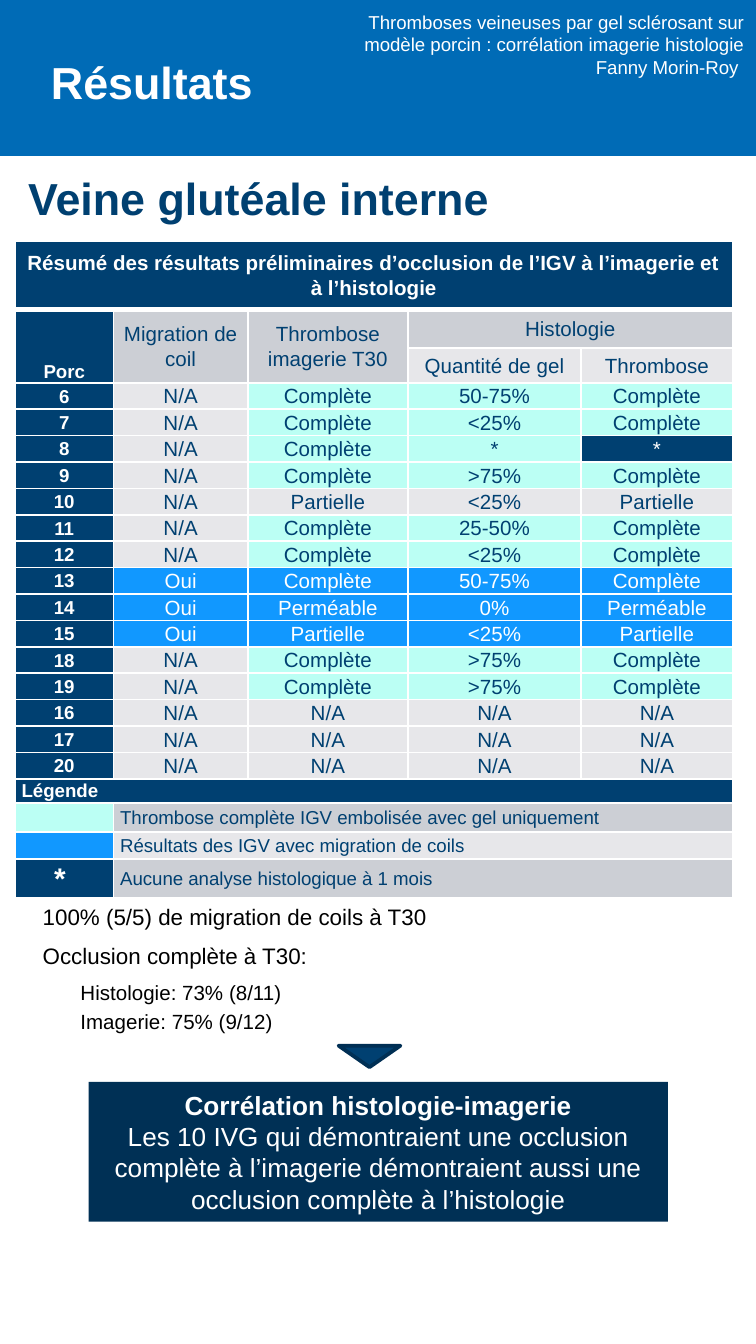
from dataclasses import dataclass

from lxml import etree
from pptx import Presentation
from pptx.dml.color import RGBColor
from pptx.enum import shapes, text
from pptx.oxml import ns
from pptx.util import Pt


@dataclass(frozen=True)
class Theme:
    font: str = "Arial"
    white: str = "FFFFFF"
    black: str = "000000"
    banner: str = "006BB6"
    navy: str = "004071"
    callout: str = "003055"
    outline: str = "002F54"
    grey: str = "CCCFD5"
    pale: str = "E7E7EA"
    mint: str = "BBFFF4"
    blue: str = "1198FF"
    title: float = 24
    conclusion: float = 14
    finding: float = 12
    cell: float = 11
    small: float = 10
    star: float = 16


@dataclass(frozen=True)
class Box:
    left: float
    top: float
    width: float
    height: float

    def lengths(self) -> tuple:
        return Pt(self.left), Pt(self.top), Pt(self.width), Pt(self.height)


@dataclass(frozen=True)
class Line:
    words: str
    size: float
    color: str
    bold: bool = False
    align: text.PP_ALIGN = text.PP_ALIGN.LEFT
    before: float = 0
    after: float = 0
    indent: float = 0
    spacing: float = 1.0


@dataclass(frozen=True)
class PigResult:
    pig: int
    migration: str
    imaging: str
    gel: str
    histology: str
    fill: str


THEME = Theme()
CENTER, RIGHT = text.PP_ALIGN.CENTER, text.PP_ALIGN.RIGHT
TOP, MIDDLE, BOTTOM = (text.MSO_ANCHOR.TOP, text.MSO_ANCHOR.MIDDLE, text.MSO_ANCHOR.BOTTOM)

RESULTS = [
    PigResult(6, "N/A", "Complète", "50-75%", "Complète", THEME.mint),
    PigResult(7, "N/A", "Complète", "<25%", "Complète", THEME.mint),
    PigResult(8, "N/A", "Complète", "*", "*", THEME.mint),
    PigResult(9, "N/A", "Complète", ">75%", "Complète", THEME.mint),
    PigResult(10, "N/A", "Partielle", "<25%", "Partielle", THEME.pale),
    PigResult(11, "N/A", "Complète", "25-50%", "Complète", THEME.mint),
    PigResult(12, "N/A", "Complète", "<25%", "Complète", THEME.mint),
    PigResult(13, "Oui", "Complète", "50-75%", "Complète", THEME.blue),
    PigResult(14, "Oui", "Perméable", "0%", "Perméable", THEME.blue),
    PigResult(15, "Oui", "Partielle", "<25%", "Partielle", THEME.blue),
    PigResult(18, "N/A", "Complète", ">75%", "Complète", THEME.mint),
    PigResult(19, "N/A", "Complète", ">75%", "Complète", THEME.mint),
    *(PigResult(pig, "N/A", "N/A", "N/A", "N/A", THEME.pale) for pig in (16, 17, 20)),
]
COLUMNS = [52.8, 72, 85.8, 92.8, 81.2]
ROWS = [36.8, 20.8, 18.5, *[13.92] * len(RESULTS), 12.2, 15.6, 14.6, 18.7]


def color(value: str) -> RGBColor:
    return RGBColor.from_string(value)


def write(frame, lines: list[Line]) -> None:
    frame.word_wrap = True
    for index, line in enumerate(lines):
        paragraph = frame.paragraphs[0] if index == 0 else frame.add_paragraph()
        if line.indent:
            paragraph.level = 1
            properties = paragraph._p.get_or_add_pPr()
            properties.set("marL", str(Pt(line.indent)))
            properties.set("indent", "0")
        paragraph.alignment = line.align
        paragraph.line_spacing = line.spacing
        paragraph.space_before, paragraph.space_after = Pt(line.before), Pt(line.after)
        run = paragraph.add_run()
        run.text = line.words
        run.font.name, run.font.size, run.font.bold = THEME.font, Pt(line.size), line.bold
        run.font.color.rgb = color(line.color)


def add_text(slide, box: Box, lines: list[Line], inset: float = 3.6) -> None:
    frame = slide.shapes.add_textbox(*box.lengths()).text_frame
    frame.margin_top = Pt(inset)
    frame.vertical_anchor = TOP
    write(frame, lines)


def add_block(slide, kind, box: Box, fill: str, outline: str = ""):
    shape = slide.shapes.add_shape(kind, *box.lengths())
    shape.shadow.inherit = False
    shape.fill.solid()
    shape.fill.fore_color.rgb = color(fill)
    if outline:
        shape.line.color.rgb = color(outline)
        shape.line.width = Pt(2)
        etree.SubElement(shape.line._get_or_add_ln(), ns.qn("a:round"))
    else:
        shape.line.fill.background()
    return shape


def prepare_cell(cell, row: int) -> None:
    cell.margin_left = cell.margin_right = Pt(3.6)
    cell.margin_top = cell.margin_bottom = 0
    ending = etree.SubElement(cell.text_frame.paragraphs[0]._p, ns.qn("a:endParaRPr"))
    ending.set("sz", str(THEME.small * 100))
    properties = cell._tc.get_or_add_tcPr()
    for side in ("L", "R", "T", "B"):
        thick = (row, side) in ((0, "B"), (1, "T"))
        border = etree.SubElement(properties, ns.qn(f"a:ln{side}"), w=str(Pt(3 if thick else 1)))
        fill = etree.SubElement(border, ns.qn("a:solidFill"))
        etree.SubElement(fill, ns.qn("a:srgbClr"), val=THEME.white)


def fill_cell(cell, fill: str, words: str = "", size: float = THEME.cell, ink: str = THEME.navy,
              bold: bool = False, align=CENTER, anchor=MIDDLE) -> None:
    cell.fill.solid()
    cell.fill.fore_color.rgb = color(fill)
    cell.vertical_anchor = anchor
    if words:
        write(cell.text_frame, [Line(words, size, ink, bold, align, spacing=1.07)])


def add_results_table(slide, left: float, top: float) -> None:
    box = Box(left, top, sum(COLUMNS), sum(ROWS))
    table = slide.shapes.add_table(len(ROWS), len(COLUMNS), *box.lengths()).table
    for column, width in zip(table.columns, COLUMNS):
        column.width = Pt(width)
    for index, (row, height) in enumerate(zip(table.rows, ROWS)):
        row.height = Pt(height)
        for cell in row.cells:
            prepare_cell(cell, index)

    legend = 3 + len(RESULTS)
    spans = [(0, 0, 0, 4), (1, 0, 2, 0), (1, 1, 2, 1), (1, 2, 2, 2), (1, 3, 1, 4), (legend, 0, legend, 4)]
    spans += [(row, 1, row, 4) for row in range(legend + 1, legend + 4)]
    for first_row, first_column, last_row, last_column in spans:
        table.cell(first_row, first_column).merge(table.cell(last_row, last_column))

    fill_cell(table.cell(0, 0), THEME.navy, "Résumé des résultats préliminaires d’occlusion de "
              "l’IGV à l’imagerie et à l’histologie", ink=THEME.white, bold=True)
    fill_cell(table.cell(1, 0), THEME.navy, "Porc", THEME.small, THEME.white, True, anchor=BOTTOM)
    for column, heading in enumerate(("Migration de coil", "Thrombose imagerie T30", "Histologie"), 1):
        fill_cell(table.cell(1, column), THEME.grey, heading)
    for column, heading in enumerate(("Quantité de gel", "Thrombose"), 3):
        fill_cell(table.cell(2, column), THEME.pale, heading)

    for row, result in enumerate(RESULTS, 3):
        fill_cell(table.cell(row, 0), THEME.navy, str(result.pig), THEME.small, THEME.white, True)
        migrated = result.fill == THEME.blue
        values = (result.migration, result.imaging, result.gel, result.histology)
        for column, value in enumerate(values, 1):
            unanalysed = column == 4 and value == "*"
            fill = THEME.pale if column == 1 and not migrated else result.fill
            fill_cell(table.cell(row, column), THEME.navy if unanalysed else fill, value,
                      ink=THEME.white if migrated or unanalysed else THEME.navy)

    left_align = text.PP_ALIGN.LEFT
    fill_cell(table.cell(legend, 0), THEME.navy, "Légende", THEME.small, THEME.white, True, left_align)
    entries = [
        (THEME.mint, "", THEME.grey, "Thrombose complète IGV embolisée avec gel uniquement"),
        (THEME.blue, "", THEME.pale, "Résultats des IGV avec migration de coils"),
        (THEME.navy, "*\u00a0", THEME.grey, "Aucune analyse histologique à 1 mois"),
    ]
    for row, (key, mark, fill, meaning) in enumerate(entries, legend + 1):
        fill_cell(table.cell(row, 0), key, mark, THEME.star, THEME.white, True)
        fill_cell(table.cell(row, 1), fill, meaning, THEME.small, align=left_align)


def main() -> None:
    presentation = Presentation()
    presentation.slide_width, presentation.slide_height = Pt(405), Pt(720)
    slide = presentation.slides.add_slide(presentation.slide_layouts[6])
    kinds = shapes.MSO_SHAPE

    add_block(slide, kinds.RECTANGLE, Box(0, 0, 405, 83.5), THEME.banner)
    add_text(slide, Box(8, 85.7, 364, 46), [Line("Veine glutéale interne", THEME.title, THEME.navy, True)], 5.5)
    add_text(slide, Box(15.8, 479.5, 364, 82), [
        Line("100% (5/5) de migration de coils à T30", THEME.finding, THEME.black, after=3.4),
        Line("Occlusion complète à T30:", THEME.finding, THEME.black, before=2.8, after=3.4),
        Line("Histologie: 73% (8/11)", THEME.cell, THEME.black, before=2.4, indent=20.2),
        Line("Imagerie: 75% (9/12)", THEME.cell, THEME.black, before=2.4, indent=20.2),
    ], 4.5)
    add_results_table(slide, 8, 129)
    add_text(slide, Box(20.2, 23.8, 355, 41.8), [Line("Résultats", THEME.title, THEME.white, True)], 5.5)

    callout = add_block(slide, kinds.RECTANGLE, Box(47.5, 579.6, 310.3, 74.9), THEME.callout)
    callout.text_frame.vertical_anchor = MIDDLE
    write(callout.text_frame, [
        Line("Corrélation histologie-imagerie", THEME.conclusion, THEME.white, True, CENTER),
        Line("Les 10 IVG qui démontraient une occlusion complète à l’imagerie démontraient "
             "aussi une occlusion complète à l’histologie", THEME.conclusion, THEME.white, align=CENTER),
    ])
    arrow = add_block(slide, kinds.ISOSCELES_TRIANGLE, Box(181.4, 560.2, 33.1, 11.5), THEME.navy, THEME.outline)
    arrow.rotation = 180
    add_text(slide, Box(185.8, 2.2, 219.6, 46.8), [
        Line("Thromboses veineuses par gel sclérosant sur modèle porcin : corrélation imagerie "
             "histologie", THEME.small, THEME.white, align=RIGHT),
        Line("Fanny Morin-Roy ", THEME.small, THEME.white, align=RIGHT),
    ])
    presentation.save("out.pptx")


if __name__ == "__main__":
    main()
